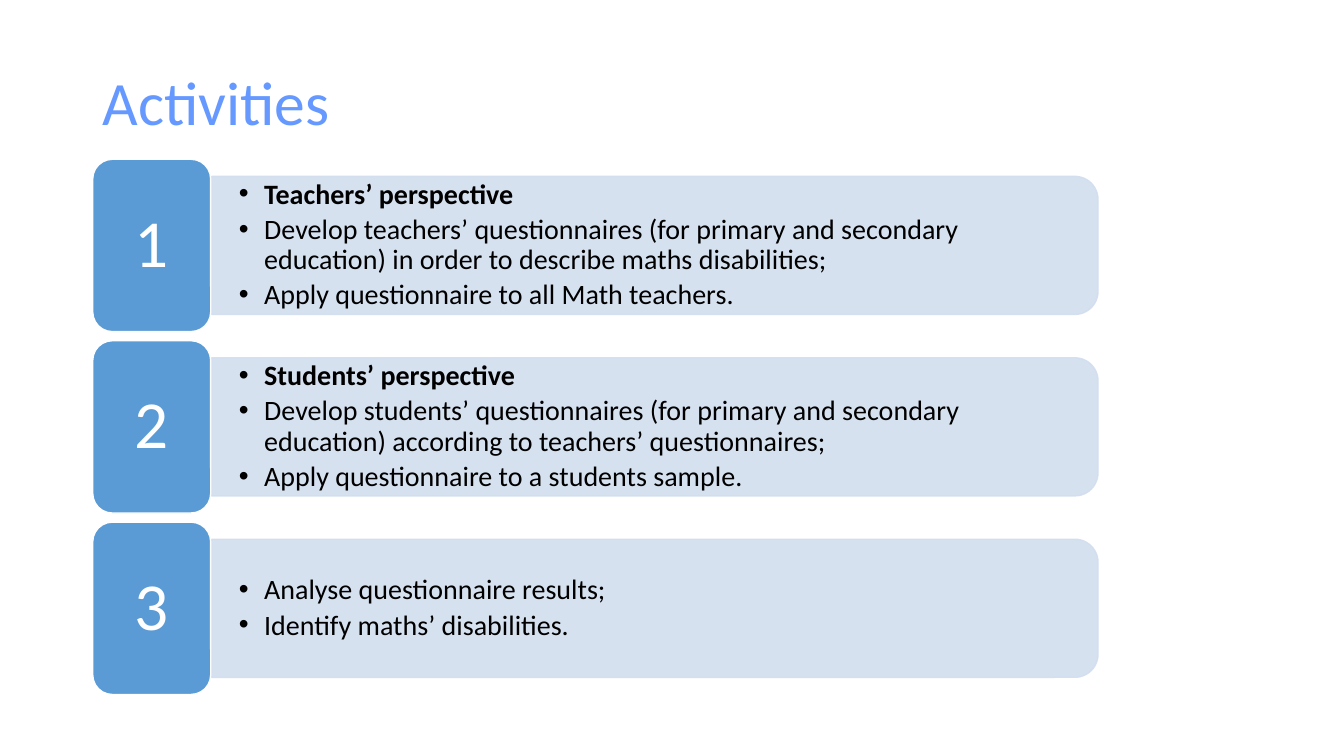
import dataclasses
import typing

import lxml.etree
import pptx
import pptx.dml.color
import pptx.enum.shapes
import pptx.enum.text
import pptx.oxml.ns
import pptx.util

Inches = pptx.util.Inches
Pt = pptx.util.Pt
qn = pptx.oxml.ns.qn
MSO_SHAPE = pptx.enum.shapes.MSO_SHAPE
MIDDLE = pptx.enum.text.MSO_ANCHOR.MIDDLE
CENTER = pptx.enum.text.PP_ALIGN.CENTER

TITLE_COLOR = "6699FF"
TILE_COLOR = "5B9BD5"
PANEL_COLOR = "D2DEEF"
WHITE = "FFFFFF"
BLACK = "000000"

LEFT = 0.92
FIRST_TOP = 1.58
ROW_STEP = 1.8
TILE_W, TILE_H = 1.17, 1.71
PANEL_W, PANEL_H = 8.79, 1.37
TEXT_W, TEXT_H = 8.72, 1.24


@dataclasses.dataclass(frozen=True)
class Activity:
    number: str
    bullets: tuple[str, ...]
    heading: str = ""


ACTIVITIES = (
    Activity(
        "1",
        (
            "Develop teachers’ questionnaires (for primary and secondary education) "
            "in order to describe maths disabilities;",
            "Apply questionnaire to all Math teachers.",
        ),
        "Teachers’ perspective",
    ),
    Activity(
        "2",
        (
            "Develop students’ questionnaires (for primary and secondary education) "
            "according to teachers’ questionnaires;",
            "Apply questionnaire to a students sample.",
        ),
        "Students’ perspective",
    ),
    Activity("3", ("Analyse questionnaire results;", "Identify maths’ disabilities.")),
)


def rgb(value: str) -> pptx.dml.color.RGBColor:
    return pptx.dml.color.RGBColor.from_string(value)


def apply(target: typing.Any, formats: dict[str, typing.Any]) -> None:
    for name, value in formats.items():
        setattr(target, name, value)


def set_frame(sp: typing.Any, inset_x: float, inset_y: float) -> typing.Any:
    tf = sp.text_frame
    apply(tf, {
        "word_wrap": True,
        "vertical_anchor": MIDDLE,
        "margin_left": Inches(inset_x),
        "margin_right": Inches(inset_x),
        "margin_top": Inches(inset_y),
        "margin_bottom": Inches(inset_y),
    })
    return tf


def write(p: typing.Any, text: str, size: float, color: str, bold: bool = False) -> None:
    p.line_spacing = 0.9
    r = p.add_run()
    r.text = text
    apply(r.font, {"name": "Calibri", "size": Pt(size), "bold": bold})
    r.font.color.rgb = rgb(color)


def add_bullet(p: typing.Any) -> None:
    apply(p, {"level": 1, "space_after": Pt(3.6)})
    pPr = p._p.get_or_add_pPr()
    pPr.set("marL", str(Inches(0.25)))
    pPr.set("indent", str(-Inches(0.25)))
    lxml.etree.SubElement(pPr, qn("a:buFont"), typeface="Arial")
    lxml.etree.SubElement(pPr, qn("a:buChar"), char="•")


def paint(sp: typing.Any, fill: str, line: str, alpha: int = 100) -> None:
    sp.shadow.inherit = False
    sp.fill.solid()
    sp.fill.fore_color.rgb = rgb(fill)
    sp.line.color.rgb = rgb(line)
    sp.line.width = Pt(1)
    if alpha < 100:
        for clr in sp._element.spPr.iter(qn("a:srgbClr")):
            lxml.etree.SubElement(clr, qn("a:alpha"), val=str(alpha * 1000))


def add_title(s: typing.Any, text: str) -> None:
    sp = s.shapes.add_textbox(Inches(LEFT), Inches(0.32), Inches(11.5), Inches(1.45))
    tf = set_frame(sp, 0.1, 0.05)
    write(tf.paragraphs[0], text, 44, TITLE_COLOR)


def add_panel(s: typing.Any, middle: float) -> None:
    center = LEFT + TILE_W + PANEL_W / 2 + 0.01
    sp = s.shapes.add_shape(
        MSO_SHAPE.ROUND_2_SAME_RECTANGLE,
        Inches(center - PANEL_H / 2), Inches(middle - PANEL_W / 2),
        Inches(PANEL_H), Inches(PANEL_W),
    )
    sp.rotation = 90
    paint(sp, PANEL_COLOR, PANEL_COLOR, 90)


def add_details(s: typing.Any, activity: Activity, middle: float) -> None:
    sp = s.shapes.add_textbox(
        Inches(LEFT + TILE_W + 0.01), Inches(middle - TEXT_H / 2),
        Inches(TEXT_W), Inches(TEXT_H),
    )
    tf = set_frame(sp, 0.27, 0.14)
    lines = ([activity.heading] if activity.heading else []) + list(activity.bullets)
    for i, text in enumerate(lines):
        p = tf.add_paragraph() if i else tf.paragraphs[0]
        write(p, text, 20, BLACK, text == activity.heading)
        add_bullet(p)


def add_tile(s: typing.Any, number: str, top: float) -> None:
    sp = s.shapes.add_shape(
        MSO_SHAPE.ROUNDED_RECTANGLE,
        Inches(LEFT), Inches(top), Inches(TILE_W), Inches(TILE_H),
    )
    paint(sp, TILE_COLOR, WHITE)
    tf = set_frame(sp, 0.2, 0.1)
    tf.paragraphs[0].alignment = CENTER
    write(tf.paragraphs[0], number, 48, WHITE)


def main() -> None:
    prs = pptx.Presentation()
    apply(prs, {"slide_width": Inches(13.33), "slide_height": Inches(7.5)})
    s = prs.slides.add_slide(prs.slide_layouts[6])
    add_title(s, "Activities")
    for i, activity in enumerate(ACTIVITIES):
        top = FIRST_TOP + i * ROW_STEP
        middle = top + TILE_H / 2
        add_panel(s, middle)
        add_details(s, activity, middle)
        add_tile(s, activity.number, top)
    prs.save("out.pptx")


if __name__ == "__main__":
    main()
